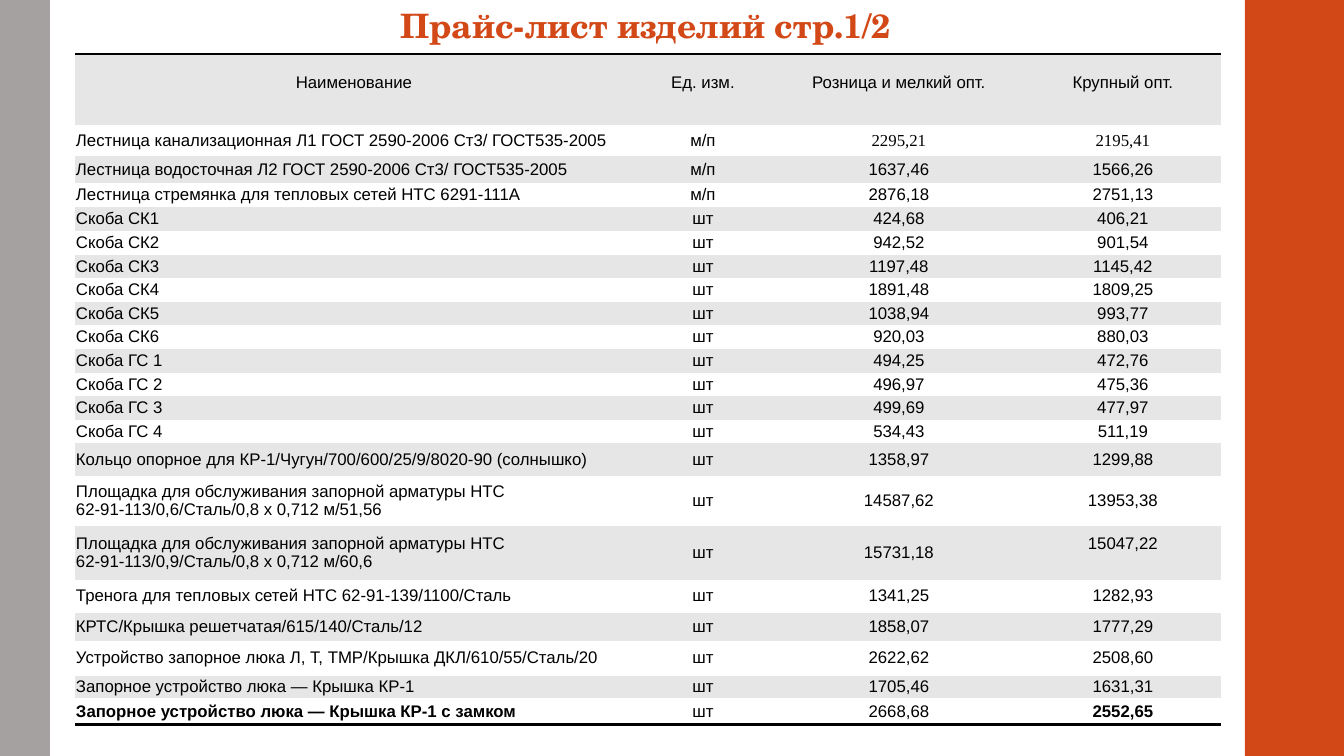
from lxml import etree
from pptx import Presentation
from pptx.dml.color import RGBColor
from pptx.enum.shapes import MSO_SHAPE
from pptx.enum.text import MSO_ANCHOR, PP_ALIGN
from pptx.oxml.ns import qn
from pptx.util import Emu, Pt

RECT = MSO_SHAPE.RECTANGLE
TOP, MIDDLE = MSO_ANCHOR.TOP, MSO_ANCHOR.MIDDLE
LEFT, CENTER = PP_ALIGN.LEFT, PP_ALIGN.CENTER
WIDE, HIGH = 1344, 756
SCALE = 12192000 / WIDE
LINE = 19
ACCENT, GRAY, BAND, WHITE, BLACK = "D34817", "A5A1A1", "E6E6E6", "FFFFFF", "000000"
PLAIN = "{2D5ABB26-0587-4C30-8999-92F81FD0307C}"

COLS = [558, 140, 252, 196]
HEAD = ["Наименование", "Ед. изм.", "Розница и мелкий опт.", "Крупный опт."]
HEIGHTS = [71, 31, 27, 24] + [24, 24, 23, 24, 23] * 2 + [33, 50, 54, 33, 28, 35, 23, 26]
GOODS = [
    ["Лестница канализационная Л1 ГОСТ 2590-2006 Ст3/ ГОСТ535-2005", "м/п", "2295,21", "2195,41"],
    ["Лестница водосточная Л2 ГОСТ 2590-2006 Ст3/ ГОСТ535-2005", "м/п", "1637,46", "1566,26"],
    ["Лестница стремянка для тепловых сетей НТС 6291-111А", "м/п", "2876,18", "2751,13"],
    ["Скоба СК1", "шт", "424,68", "406,21"],
    ["Скоба СК2", "шт", "942,52", "901,54"],
    ["Скоба СК3", "шт", "1197,48", "1145,42"],
    ["Скоба СК4", "шт", "1891,48", "1809,25"],
    ["Скоба СК5", "шт", "1038,94", "993,77"],
    ["Скоба СК6", "шт", "920,03", "880,03"],
    ["Скоба ГС 1", "шт", "494,25", "472,76"],
    ["Скоба ГС 2", "шт", "496,97", "475,36"],
    ["Скоба ГС 3", "шт", "499,69", "477,97"],
    ["Скоба ГС 4", "шт", "534,43", "511,19"],
    ["Кольцо опорное для КР-1/Чугун/700/600/25/9/8020-90 (солнышко)", "шт", "1358,97", "1299,88"],
    ["Площадка для обслуживания запорной арматуры НТС 62-91-113/0,6/Сталь/0,8 х 0,712 м/51,56",
     "шт", "14587,62", "13953,38"],
    ["Площадка для обслуживания запорной арматуры НТС 62-91-113/0,9/Сталь/0,8 х 0,712 м/60,6",
     "шт", "15731,18", "15047,22"],
    ["Тренога для тепловых сетей НТС 62-91-139/1100/Сталь", "шт", "1341,25", "1282,93"],
    ["КРТС/Крышка решетчатая/615/140/Сталь/12", "шт", "1858,07", "1777,29"],
    ["Устройство запорное люка Л, Т, ТМР/Крышка ДКЛ/610/55/Сталь/20", "шт", "2622,62", "2508,60"],
    ["Запорное устройство люка — Крышка КР-1", "шт", "1705,46", "1631,31"],
    ["Запорное устройство люка — Крышка КР-1 с замком", "шт", "2668,68", "2552,65"],
]
LAST = len(GOODS)
SERIF = {(1, 2), (1, 3)}
BOLD = {(LAST, 0), (LAST, 3)}
RAISED = (16, 3)


def px(count):
    """Turn pixels into EMU."""
    return Emu(round(count * SCALE))


def color(code):
    """Turn a hex string into a colour."""
    return RGBColor.from_string(code)


def write(frame, text, size, font, code, bold, align):
    """Put one styled run into the first paragraph of a frame."""
    para = frame.paragraphs[0]
    para.alignment = align
    run = para.add_run()
    run.text = text
    run.font.size = Pt(size)
    run.font.name = font
    run.font.bold = bold
    run.font.color.rgb = color(code)
    return para


def add_bar(slide, left, top, width, height, code):
    """Draw a plain filled rectangle."""
    bar = slide.shapes.add_shape(RECT, px(left), px(top), px(width), px(height))
    bar.shadow.inherit = False
    bar.fill.solid()
    bar.fill.fore_color.rgb = color(code)
    bar.line.fill.background()
    return bar


def add_rule(cell, side):
    """Draw a black border on one side of a cell."""
    line = etree.Element(qn(f"a:{side}"), w=str(Pt(2)))
    fill = etree.SubElement(line, qn("a:solidFill"))
    etree.SubElement(fill, qn("a:srgbClr"), val=BLACK)
    cell._tc.get_or_add_tcPr().insert(0, line)


def fill_cell(cell, row, col, text):
    """Fill, place and write one cell of the price list."""
    spot = (row, col)
    cell.fill.solid()
    cell.fill.fore_color.rgb = color(WHITE if row % 2 else BAND)
    cell.margin_left = cell.margin_right = px(1)
    cell.margin_top = px(0 if row else LINE)
    cell.margin_bottom = px(LINE if spot == RAISED else 0)
    cell.vertical_anchor = MIDDLE if row else TOP
    font = "Times New Roman" if spot in SERIF else "Arial"
    align = LEFT if row and col == 0 else CENTER
    write(cell.text_frame, text, 12, font, BLACK, spot in BOLD, align)
    if row == 0:
        add_rule(cell, "lnT")
    if row == LAST:
        add_rule(cell, "lnB")


def add_prices(slide):
    """Build the price table."""
    rows = [HEAD] + GOODS
    frame = slide.shapes.add_table(
        len(rows), len(COLS), px(75), px(54), px(sum(COLS)), px(sum(HEIGHTS)))
    table = frame.table
    table.first_row = table.horz_banding = False
    table._tbl.tblPr.find(qn("a:tableStyleId")).text = PLAIN
    for col, width in enumerate(COLS):
        table.columns[col].width = px(width)
    for row, texts in enumerate(rows):
        table.rows[row].height = px(HEIGHTS[row])
        for col, text in enumerate(texts):
            fill_cell(table.cell(row, col), row, col, text)


def add_title(slide):
    """Write the heading above the table."""
    frame = add_bar(slide, 61, 8, 1169, 40, WHITE).text_frame
    frame.word_wrap = True
    frame.vertical_anchor = MIDDLE
    para = write(frame, "Прайс-лист изделий стр.1/2", 24, "TeX Gyre Schola", ACCENT, True, CENTER)
    para.line_spacing = 0.9


def main():
    """Build the slide and save it."""
    deck = Presentation()
    deck.slide_width, deck.slide_height = px(WIDE), px(HIGH)
    slide = deck.slides.add_slide(deck.slide_layouts[6])
    add_bar(slide, 1245, 0, WIDE - 1245, HIGH, ACCENT)
    add_bar(slide, 0, 0, 50, HIGH, GRAY)
    add_prices(slide)
    add_title(slide)
    deck.save("out.pptx")


if __name__ == "__main__":
    main()
